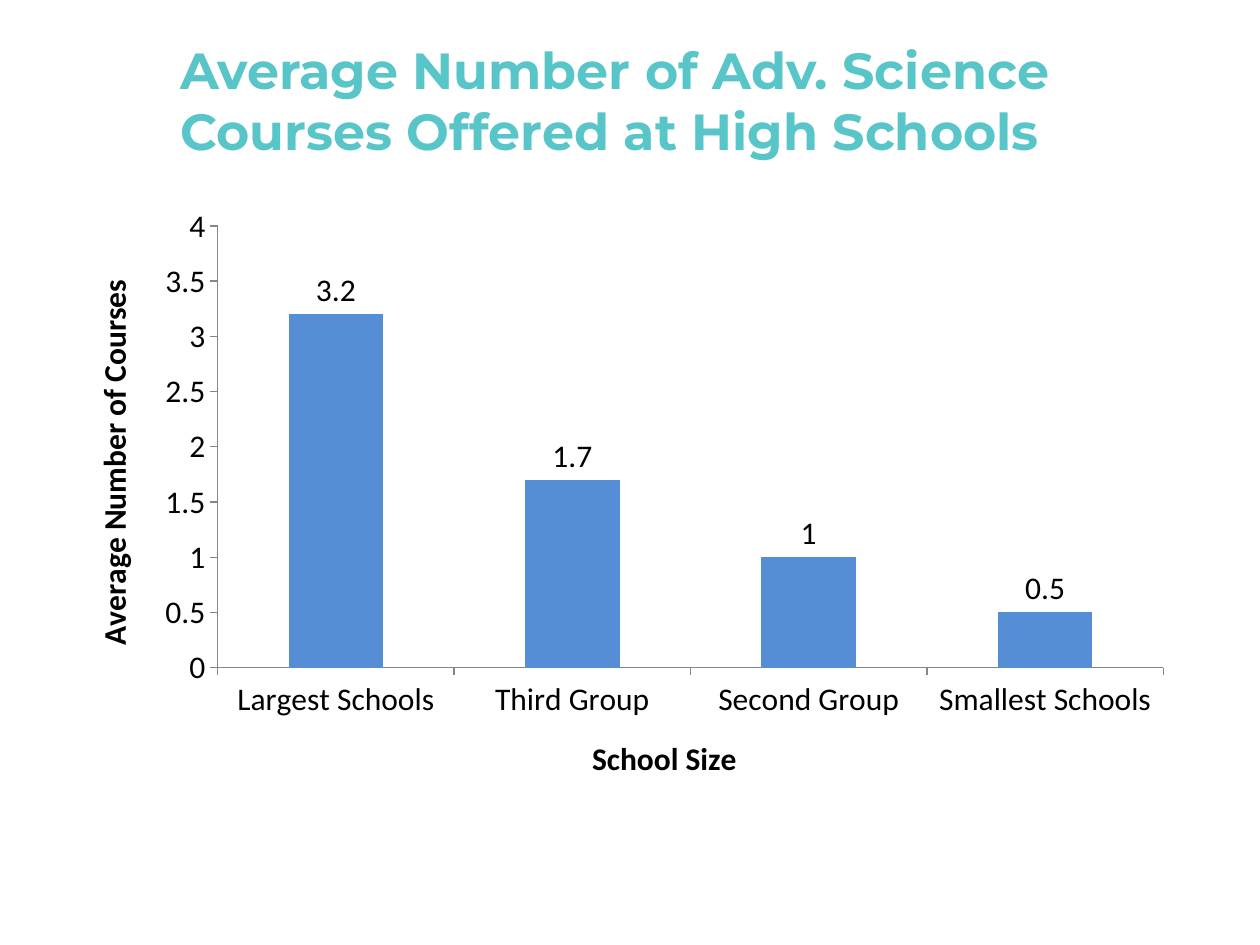
from dataclasses import dataclass

from lxml.etree import SubElement
from pptx import Presentation
from pptx.chart.data import CategoryChartData
from pptx.dml.color import RGBColor
from pptx.enum.chart import XL_CHART_TYPE, XL_LABEL_POSITION, XL_TICK_MARK
from pptx.enum.text import MSO_ANCHOR, MSO_AUTO_SIZE, PP_ALIGN
from pptx.oxml.ns import qn
from pptx.util import Inches, Pt


@dataclass(frozen=True)
class Theme:
    heading_font: str = "Montserrat"
    chart_font: str = "Calibri"
    heading_size: float = 29
    chart_size: float = 18
    heading: RGBColor = RGBColor(0x58, 0xC5, 0xC9)
    ink: RGBColor = RGBColor(0, 0, 0)
    bar: RGBColor = RGBColor(0x55, 0x8E, 0xD5)
    axis: RGBColor = RGBColor(0x86, 0x86, 0x86)


def write(frame, text, *, font, size, color, bold=False):
    """Put one formatted paragraph into a text frame."""
    frame.text = text
    paragraph = frame.paragraphs[0]
    run_font = paragraph.runs[0].font
    run_font.name, run_font.size, run_font.bold = font, Pt(size), bold
    run_font.color.rgb = color
    return paragraph


class SlideBuilder:
    def __init__(self, slide, theme):
        self.slide = slide
        self.theme = theme

    def title(self, text, left, top, width, height):
        heading = self.slide.shapes.title
        heading.left, heading.top = Inches(left), Inches(top)
        heading.width, heading.height = Inches(width), Inches(height)
        frame = heading.text_frame
        frame.word_wrap = True
        frame.auto_size = MSO_AUTO_SIZE.NONE
        frame.vertical_anchor = MSO_ANCHOR.MIDDLE
        paragraph = write(frame, text, font=self.theme.heading_font,
                          size=self.theme.heading_size,
                          color=self.theme.heading, bold=True)
        paragraph.alignment = PP_ALIGN.LEFT

    def style_axis(self, axis, title):
        axis.has_major_gridlines = False
        axis.major_tick_mark = XL_TICK_MARK.OUTSIDE
        axis.minor_tick_mark = XL_TICK_MARK.NONE
        axis.format.line.color.rgb = self.theme.axis
        axis.format.line.width = Pt(0.75)
        write(axis.axis_title.text_frame, title, font=self.theme.chart_font,
              size=self.theme.chart_size, color=self.theme.ink, bold=True)

    def place_plot(self, chart, **fractions):
        """Fix the inner plot area as fractions of the chart."""
        area = chart.plots[0]._element.getparent()
        layout = area.find(qn("c:layout"))
        if layout is None:
            layout = SubElement(area, qn("c:layout"))
            area.insert(0, layout)
        manual = SubElement(layout, qn("c:manualLayout"))
        settings = {"layoutTarget": "inner", "xMode": "edge",
                    "yMode": "edge", **fractions}
        for tag, value in settings.items():
            SubElement(manual, qn(f"c:{tag}")).set("val", str(value))

    def column_chart(self, values, left, top, width, height, *,
                     category_title, value_title, maximum, step):
        data = CategoryChartData()
        data.categories = list(values)
        data.add_series("Series 1", list(values.values()))
        chart = self.slide.shapes.add_chart(
            XL_CHART_TYPE.COLUMN_CLUSTERED, Inches(left), Inches(top),
            Inches(width), Inches(height), data).chart
        chart.has_legend = False
        chart.has_title = False
        chart.font.name = self.theme.chart_font
        chart.font.size = Pt(self.theme.chart_size)
        chart.font.color.rgb = self.theme.ink

        # Axes
        self.style_axis(chart.category_axis, category_title)
        self.style_axis(chart.value_axis, value_title)
        chart.value_axis.minimum_scale = 0
        chart.value_axis.maximum_scale = maximum
        chart.value_axis.major_unit = step

        # Columns and their values
        columns = chart.plots[0]
        columns.gap_width = 150
        columns.vary_by_categories = False
        fill = columns.series[0].format.fill
        fill.solid()
        fill.fore_color.rgb = self.theme.bar
        columns.has_data_labels = True
        columns.data_labels.show_value = True
        columns.data_labels.position = XL_LABEL_POSITION.OUTSIDE_END
        self.place_plot(chart, x=0.13, y=0.05, w=0.85, h=0.72)


def main():
    deck = Presentation()
    deck.slide_width, deck.slide_height = Inches(10), Inches(7.5)
    title_only = deck.slide_layouts[5]
    builder = SlideBuilder(deck.slides.add_slide(title_only), Theme())

    # Heading
    builder.title("Average Number of Adv. Science Courses Offered at High Schools",
                  1.33, 0.17, 8.33, 1.25)

    # Courses by school size
    courses = {"Largest Schools": 3.2, "Third Group": 1.7,
               "Second Group": 1, "Smallest Schools": 0.5}
    builder.column_chart(courses, 0.58, 1.55, 8.83, 4.87,
                         category_title="School Size",
                         value_title="Average Number of Courses",
                         maximum=4, step=0.5)
    deck.save("out.pptx")


if __name__ == "__main__":
    main()
